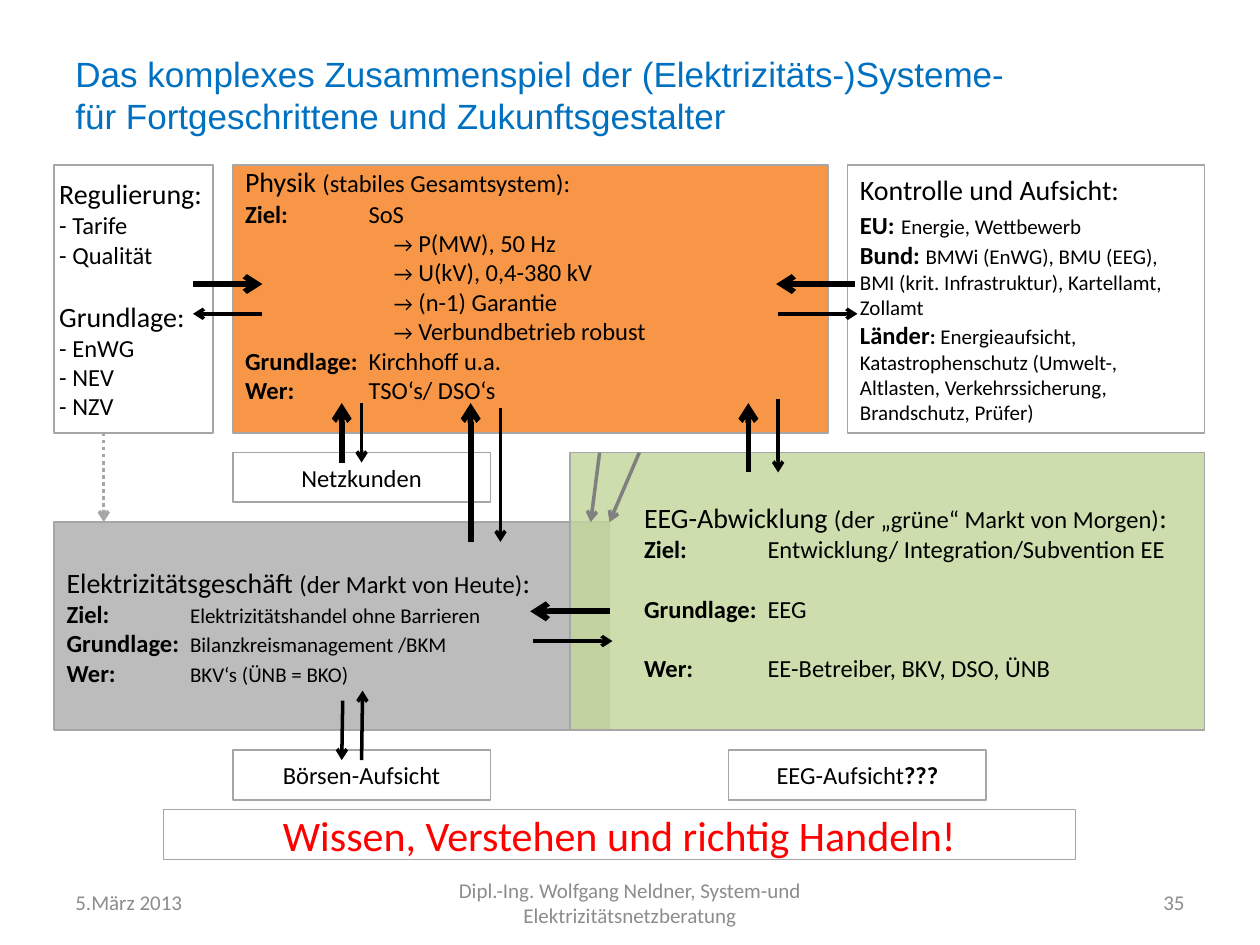
import lxml.etree
import pptx
import pptx.dml.color
import pptx.enum.dml
import pptx.enum.shapes
import pptx.enum.text
import pptx.oxml.ns
import pptx.util

COLORS = {
    "title": "0070C0", "text": "000000", "footer": "8C8C8C", "slogan": "FF0000",
    "border": "A6A6A6", "white": "FFFFFF", "physics": "F79646",
    "market": "A6A6A6", "green": "C3D69B", "overlap": "808080",
}
WIDTH, HEIGHT = 10, 7.5
# The diagram is 58 square grid units wide
LEFT, TOP, UNIT = 0.43, 1.31, 9.13 / 58
ALIGN = pptx.enum.text.PP_ALIGN
ANCHOR = pptx.enum.text.MSO_ANCHOR
THICK, THIN = 3.25, 2

# Paragraphs are lists of runs: (text, size, bold)
REGULATION = [
    [("Regulierung:", 16, False)],
    [("- Tarife", 14, False)],
    [("- Qualität", 14, False)],
    [("Grundlage:", 16, False)],
    [("- EnWG", 14, False)],
    [("- NEV", 14, False)],
    [("- NZV", 14, False)],
]
PHYSICS = [
    [("Physik ", 16, False), ("(stabiles Gesamtsystem):", 14, False)],
    [("Ziel:", 14, True), ("\tSoS", 14, False)],
    *[[("\t\t→", 12, False), (" " + goal, 14, False)] for goal in (
        "P(MW), 50 Hz", "U(kV), 0,4-380 kV", "(n-1) Garantie",
        "Verbundbetrieb robust")],
    [("Grundlage: ", 14, True), ("\tKirchhoff u.a.", 14, False)],
    [("Wer: ", 14, True), ("\tTSO‘s/ DSO‘s", 14, False)],
]
CONTROL = [
    [("Kontrolle und Aufsicht:", 16, False)],
    [("EU:", 14, True), (" ", 16, True), ("Energie, Wettbewerb", 12, False)],
    [("Bund: ", 14, True),
     ("BMWi (EnWG), BMU (EEG), BMI (krit. Infrastruktur), Kartellamt, Zollamt",
      12, False)],
    [("Länder", 14, True), (": ", 12, True),
     ("Energieaufsicht, Katastrophenschutz (Umwelt-, Altlasten, "
      "Verkehrssicherung, Brandschutz, Prüfer)", 12, False)],
]
MARKET = [
    [("Elektrizitätsgeschäft ", 16, False),
     ("(der Markt von Heute)", 14, False), (":", 16, False)],
    *[[(label + " \t", 14, True), (value, 12, False)] for label, value in (
        ("Ziel:", "Elektrizitätshandel ohne Barrieren"),
        ("Grundlage:", "Bilanzkreismanagement /BKM"),
        ("Wer:", "BKV‘s (ÜNB = BKO)"))],
]
GREEN_MARKET = [
    [("\tEEG-Abwicklung ", 16, False),
     ("(der „grüne“ Markt von Morgen)", 14, False), (":", 16, False)],
    *[[("\t" + label + " ", 14, True), ("\t" + value, 14, False)]
      for label, value in (
        ("Ziel:", "Entwicklung/ Integration/Subvention EE"),
        ("Grundlage:", "EEG"),
        ("Wer:", "EE-Betreiber, BKV, DSO, ÜNB"))],
]

# Arrows in grid units: start column, start row, end column, end row, width
ARROWS = [
    (14.5, 15, 14.5, 12, THICK), (15.5, 12, 15.5, 15, THIN),
    (7, 6, 10.5, 6, THICK), (10.5, 7.5, 7, 7.5, THIN),
    (40.4, 6, 36.4, 6, THICK), (36.5, 7.5, 40.5, 7.5, THIN),
    (35, 15.5, 35, 12, THICK), (36.5, 11.8, 36.5, 15.5, THIN),
    (21, 19, 21, 12, THICK), (22.5, 12.25, 22.5, 19, THIN),
    (14.55, 27, 14.5, 30, THIN), (15.5, 30, 15.55, 26.5, THIN),
    (28, 22.5, 24, 22.5, THICK), (24.15, 24, 28.15, 24, THIN),
]


def inches(*lengths):
    return [pptx.util.Inches(length) for length in lengths]


def rgb(name):
    return pptx.dml.color.RGBColor.from_string(COLORS[name])


def add_child(parent, tag, **attributes):
    return lxml.etree.SubElement(parent, pptx.oxml.ns.qn(tag), attributes)


def write_text(shape, paragraphs, color="text", font="Calibri",
               align=ALIGN.LEFT, anchor=ANCHOR.MIDDLE, tabs=(), gaps=(),
               margins=None):
    """Fill a shape; gaps lists the paragraphs set off by a line's height."""
    frame = shape.text_frame
    settings = {"word_wrap": True, "vertical_anchor": anchor}
    for side, margin in (margins or {}).items():
        settings["margin_" + side] = pptx.util.Inches(margin)
    for name, value in settings.items():
        setattr(frame, name, value)
    for index, runs in enumerate(paragraphs):
        paragraph = frame.add_paragraph() if index else frame.paragraphs[0]
        if tabs:
            tab_list = add_child(paragraph._p.get_or_add_pPr(), "a:tabLst")
            for position in tabs:
                add_child(tab_list, "a:tab", algn="l",
                          pos=str(pptx.util.Inches(position)))
        paragraph.alignment = align
        if index in gaps:
            paragraph.space_before = pptx.util.Pt(17)
        for text, size, bold in runs:
            run = paragraph.add_run()
            run.text = text
            run.font.color.rgb = rgb(color)
            values = {"name": font, "size": pptx.util.Pt(size), "bold": bold}
            for name, value in values.items():
                setattr(run.font, name, value)


def add_box(slide, column, row, columns, rows, paragraphs, fill="white",
            opacity=None, border=1, **text_format):
    """Add a bordered rectangle placed in grid units."""
    shape = slide.shapes.add_shape(
        pptx.enum.shapes.MSO_SHAPE.RECTANGLE,
        *inches(LEFT + column * UNIT, TOP + row * UNIT,
                columns * UNIT, rows * UNIT))
    shape.shadow.inherit = False
    shape.fill.solid()
    shape.fill.fore_color.rgb = rgb(fill)
    if opacity:
        color = shape._element.spPr.find(".//" + pptx.oxml.ns.qn("a:srgbClr"))
        add_child(color, "a:alpha", val=str(opacity * 1000))
    shape.line.color.rgb = rgb("border")
    shape.line.width = pptx.util.Pt(border)
    write_text(shape, paragraphs, **text_format)


def add_label(slide, left, top, width, height, lines, size, **text_format):
    """Add a text box placed in shares of the slide's size."""
    shape = slide.shapes.add_textbox(
        *inches(left * WIDTH, top * HEIGHT, width * WIDTH, height * HEIGHT))
    write_text(shape, [[(line, size, False)] for line in lines], **text_format)


def add_arrow(slide, column, row, end_column, end_row, width,
              color="text", dash=None):
    connector = slide.shapes.add_connector(
        pptx.enum.shapes.MSO_CONNECTOR.STRAIGHT,
        *inches(LEFT + column * UNIT, TOP + row * UNIT,
                LEFT + end_column * UNIT, TOP + end_row * UNIT))
    connector.line.color.rgb = rgb(color)
    connector.line.width = pptx.util.Pt(width)
    if dash:
        connector.line.dash_style = dash
    add_child(connector.line._get_or_add_ln(), "a:tailEnd", type="arrow")
    add_child(connector._element.spPr, "a:effectLst")


def main():
    presentation = pptx.Presentation()
    presentation.slide_width, presentation.slide_height = inches(WIDTH, HEIGHT)
    slide = presentation.slides.add_slide(presentation.slide_layouts[6])

    # Title and footer
    add_label(slide, 0.05, 0.02, 0.9, 0.16,
              ["Das komplexes Zusammenspiel der (Elektrizitäts-)Systeme-",
               "für Fortgeschrittene und Zukunftsgestalter"], 20,
              color="title", font="Arial")
    for left, width, text, align in (
            (0.05, 0.23, "5.März 2013", ALIGN.LEFT),
            (0.34, 0.32, "Dipl.-Ing. Wolfgang Neldner, System-und "
             "Elektrizitätsnetzberatung", ALIGN.CENTER),
            (0.72, 0.23, "35", ALIGN.RIGHT)):
        add_label(slide, left, 0.93, width, 0.05, [text], 12,
                  color="footer", align=align)

    # Market of today
    add_box(slide, 0, 18, 28, 10.5, MARKET, fill="market", opacity=75,
            tabs=[0.98])

    # Upper row: regulation, physics, control
    add_box(slide, 0, 0, 8, 13.5, REGULATION, gaps=[3],
            margins={"left": 0.04, "right": 0.04})
    add_box(slide, 9, 0, 30, 13.5, PHYSICS, fill="physics",
            anchor=ANCHOR.TOP, tabs=[0.98, 1.18], margins={"top": 0})
    add_box(slide, 40, 0, 18, 13.5, CONTROL)

    # Small boxes and slogan
    for column, row, runs in (
            (9, 14.5, [("Netzkunden", 14, False)]),
            (9, 29.5, [("Börsen-Aufsicht", 14, False)]),
            (34, 29.5, [("EEG-Aufsicht", 14, False), ("???", 14, True)])):
        add_box(slide, column, row, 13, 2.5, [runs], align=ALIGN.CENTER)
    add_box(slide, 5.5, 32.5, 46, 2.5,
            [[("Wissen, Verstehen und richtig Handeln!", 24, False)]],
            border=0.75, color="slogan", align=ALIGN.CENTER)

    # Market of tomorrow, overlapping the market of today
    add_box(slide, 26, 14.5, 32, 14, GREEN_MARKET, fill="green", opacity=82,
            tabs=[0.49, 1.47], gaps=[2, 3])

    # Arrows between the systems
    for arrow in ARROWS:
        add_arrow(slide, *arrow)
    add_arrow(slide, 27.5, 14.5, 27.05, 18, THIN, color="overlap")
    add_arrow(slide, 29.5, 14.5, 28, 18, THIN, color="overlap")
    add_arrow(slide, 2.5, 13.5, 2.5, 18, THIN, color="border",
              dash=pptx.enum.dml.MSO_LINE.ROUND_DOT)

    presentation.save("out.pptx")


if __name__ == "__main__":
    main()
